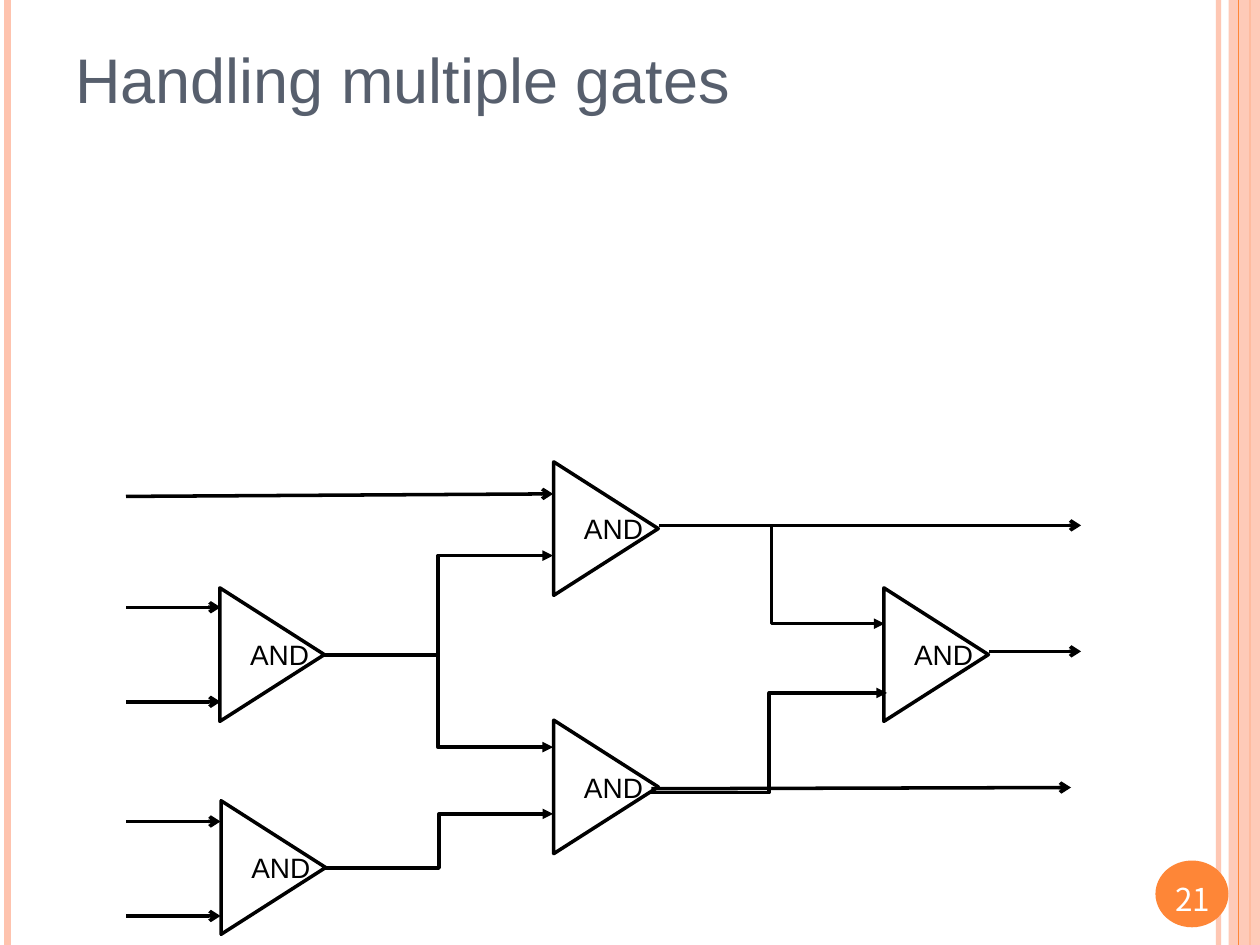
from typing import NamedTuple, Optional

from lxml import etree
from pptx import Presentation
from pptx.dml.color import RGBColor
from pptx.enum import shapes, text
from pptx.oxml.ns import qn
from pptx.util import Inches, Pt

COLORS = {
    "peach": "FEC3AE",
    "orange": "FE8637",
    "slate": "575F6D",
    "black": "000000",
    "white": "FFFFFF",
}
STRAIGHT = shapes.MSO_CONNECTOR.STRAIGHT
ELBOW = shapes.MSO_CONNECTOR.ELBOW
GATE_W, GATE_H = 1.06, 0.83


class Stripe(NamedTuple):
    x: float
    width: float
    color: str
    opacity: Optional[int] = None


class Gate(NamedTuple):
    left: float
    top: float


class Wire(NamedTuple):
    x1: float
    y1: float
    x2: float
    y2: float
    kind: int = STRAIGHT


LEFT_STRIPES = [
    Stripe(9.67, 3, "peach", 93),
    Stripe(0.06, 4.5, "peach"),
    Stripe(9.92, 1.5, "orange"),
]
EDGE_STRIPE = Stripe(9.83, 0.75, "orange")
GATES = [Gate(1.63, 4.78), Gate(4.28, 3.78), Gate(4.28, 5.83), Gate(1.64, 6.47), Gate(6.9, 4.78)]
INPUTS = [Wire(1, y, 1.75, y) for y in (4.82, 5.57, 6.52, 7.27)]
WIRES = INPUTS + [
    Wire(1, 3.94, 4.39, 3.92),
    Wire(2.56, 5.2, 4.39, 4.41, ELBOW),
    Wire(2.56, 5.2, 4.39, 5.93, ELBOW),
    Wire(2.58, 6.89, 4.39, 6.46, ELBOW),
    Wire(5.23, 4.17, 8.58, 4.17),
    Wire(7.85, 5.17, 8.58, 5.17),
    Wire(5.17, 6.26, 8.5, 6.25),
    Wire(5.23, 4.17, 7.02, 4.95, ELBOW),
    Wire(5.17, 6.29, 7.04, 5.5, ELBOW),
]


def rgb(name: str) -> RGBColor:
    """Return the named palette colour."""
    return RGBColor.from_string(COLORS[name])


def set_opacity(element, percent: int) -> None:
    """Make the first solid colour of an element partly transparent."""
    color = next(element.iter(qn("a:srgbClr")))
    etree.SubElement(color, qn("a:alpha")).set("val", str(percent * 1000))


def write(frame, wording: str, size: float, font: str, color: str, align=None) -> None:
    """Put one formatted paragraph in a text frame."""
    frame.text = wording
    paragraph = frame.paragraphs[0]
    paragraph.alignment = align
    run_font = paragraph.runs[0].font
    run_font.size, run_font.name = Pt(size), font
    run_font.color.rgb = rgb(color)


def set_insets(frame, left: float, top: float, right: float, bottom: float) -> None:
    """Set the four inner margins of a text frame."""
    frame.margin_left, frame.margin_top = Inches(left), Inches(top)
    frame.margin_right, frame.margin_bottom = Inches(right), Inches(bottom)


def draw_line(slide, wire: Wire, width: float, color: str):
    """Draw a connector without a shadow."""
    ends = [Inches(v) for v in wire[:4]]
    line = slide.shapes.add_connector(wire.kind, *ends)
    line.line.width = Pt(width)
    line.line.color.rgb = rgb(color)
    etree.SubElement(line._element.spPr, qn("a:effectLst"))
    return line


def draw_stripe(slide, stripe: Stripe) -> None:
    """Draw a vertical stripe over the full slide height."""
    line = draw_line(slide, Wire(stripe.x, 0, stripe.x, 7.5), stripe.width, stripe.color)
    if stripe.opacity is not None:
        set_opacity(line._element.spPr, stripe.opacity)


def draw_wire(slide, wire: Wire) -> None:
    """Draw a signal wire with its arrowhead."""
    line = draw_line(slide, wire, 2, "black")
    head = "arrow" if wire.kind == STRAIGHT else "triangle"
    etree.SubElement(line.line._get_or_add_ln(), qn("a:tailEnd")).set("type", head)


def draw_filled(slide, preset, box: tuple, color: str):
    """Draw a filled preset shape without outline or shadow."""
    shape = slide.shapes.add_shape(preset, *(Inches(v) for v in box))
    shape.shadow.inherit = False
    shape.fill.solid()
    shape.fill.fore_color.rgb = rgb(color)
    shape.line.fill.background()
    return shape


def draw_gate(slide, gate: Gate) -> None:
    """Draw an AND gate that points to the right."""
    box = (gate.left, gate.top, GATE_W, GATE_H)
    triangle = draw_filled(slide, shapes.MSO_SHAPE.FLOWCHART_MERGE, box, "white")
    triangle.rotation = 270
    triangle.line.color.rgb = rgb("black")
    triangle.line.width = Pt(2)
    frame = triangle.text_frame
    set_insets(frame, 0, 0.24, 0, 0)
    frame.word_wrap = False
    frame.vertical_anchor = text.MSO_ANCHOR.MIDDLE
    frame._txBody.bodyPr.set("vert", "eaVert")
    write(frame, "AND", 16, "Arial", "black", text.PP_ALIGN.CENTER)


def draw_text(slide, box: tuple, anchor):
    """Add a wrapping text box and return its frame."""
    frame = slide.shapes.add_textbox(*(Inches(v) for v in box)).text_frame
    frame.word_wrap = True
    frame.vertical_anchor = anchor
    return frame


def main() -> None:
    """Build the slide and save it."""
    deck = Presentation()
    deck.slide_width, deck.slide_height = Inches(10), Inches(7.5)
    slide = deck.slides.add_slide(deck.slide_layouts[6])

    for stripe in LEFT_STRIPES:
        draw_stripe(slide, stripe)
    band = draw_filled(slide, shapes.MSO_SHAPE.RECTANGLE, (9.75, 0, 0.25, 7.5), "peach")
    set_opacity(band._element.spPr, 87)
    draw_stripe(slide, EDGE_STRIPE)
    draw_filled(slide, shapes.MSO_SHAPE.OVAL, (9.17, 6.83, 0.58, 0.53), "orange")

    title = draw_text(slide, (0.5, 0.17, 8.5, 0.75), text.MSO_ANCHOR.BOTTOM)
    set_insets(title, 0.1, 0.08, 0.1, 0)
    write(title, "Handling multiple gates", 36, "Arial", "slate")
    number = draw_text(slide, (9.13, 6.85, 0.67, 0.57), text.MSO_ANCHOR.MIDDLE)
    write(number, "21", 18, "Noto Sans CJK JP", "white", text.PP_ALIGN.CENTER)

    for gate in GATES:
        draw_gate(slide, gate)
    for wire in WIRES:
        draw_wire(slide, wire)
    deck.save("out.pptx")


if __name__ == "__main__":
    main()
